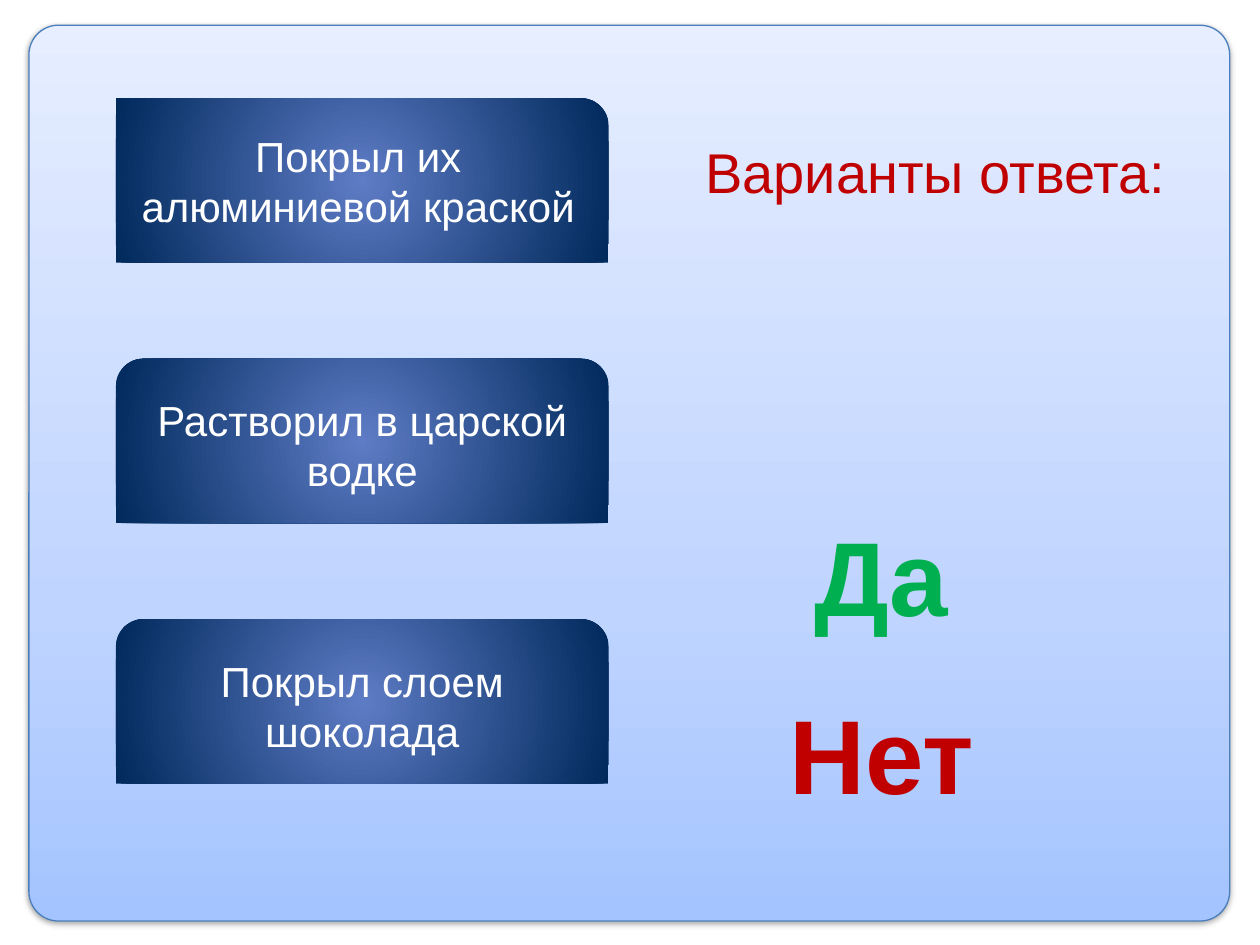
from pptx import Presentation, oxml, util as u
from pptx.dml.color import RGBColor
from pptx.enum import shapes, text
from pptx.oxml import ns

WHITE = RGBColor(0xFF, 0xFF, 0xFF)
RED = RGBColor(0xC0, 0x00, 0x00)
GREEN = RGBColor(0x00, 0xB0, 0x50)
BORDER = RGBColor(0x4B, 0x7E, 0xBC)
PANEL_STOPS = [
    (0, RGBColor(0xA4, 0xC4, 0xFF)),
    (35, RGBColor(0xBF, 0xD4, 0xFF)),
    (100, RGBColor(0xE6, 0xEE, 0xFF)),
]
BUTTON_STOPS = [
    (0, RGBColor(0x5E, 0x7C, 0xC5)),
    (100, RGBColor(0x00, 0x29, 0x5C)),
]
UPWARD = '<a:lin ang="16200000" scaled="0"/>'
RADIAL = '<a:path path="circle"><a:fillToRect l="50000" t="50000" r="50000" b="50000"/></a:path>'
SOFT_SHADOW = (
    f'<a:outerShdw {ns.nsdecls("a")} blurRad="{u.Pt(3.1)}" dist="{u.Pt(1.6)}" dir="5400000" '
    'rotWithShape="0"><a:srgbClr val="000000"><a:alpha val="38000"/></a:srgbClr></a:outerShdw>'
)

COLUMNS, ROWS = 100, 75
WIDTH, HEIGHT = u.Inches(10), u.Inches(7.5)
SHAPE = shapes.MSO_SHAPE


def grid(left, top, width, height):
    col, row = WIDTH / COLUMNS, HEIGHT / ROWS
    return [round(v) for v in (left * col, top * row, width * col, height * row)]


def set_gradient(s, stops, direction):
    s.fill.gradient()
    old = s._element.spPr.find(ns.qn("a:gradFill"))
    marks = "".join(
        f'<a:gs pos="{pos * 1000}"><a:srgbClr val="{color}"/></a:gs>' for pos, color in stops
    )
    new = oxml.parse_xml(
        f'<a:gradFill {ns.nsdecls("a")} rotWithShape="1"><a:gsLst>{marks}</a:gsLst>{direction}</a:gradFill>'
    )
    old.getparent().replace(old, new)


def write(s, words, size=24, color=WHITE, bold=False):
    tf = s.text_frame
    tf.word_wrap = True
    tf.vertical_anchor = text.MSO_ANCHOR.MIDDLE
    p = tf.paragraphs[0]
    p.alignment = text.PP_ALIGN.CENTER
    r = p.add_run()
    r.text = words
    r.font.name = "Arial"
    r.font.size = u.Pt(size)
    r.font.bold = bold
    r.font.color.rgb = color


def add_label(sp, box, words, **style):
    write(sp.add_textbox(*grid(*box)), words, **style)


def add_panel(sp, box):
    s = sp.add_shape(SHAPE.ROUNDED_RECTANGLE, *grid(*box))
    s.adjustments[0] = 0.033
    set_gradient(s, PANEL_STOPS, UPWARD)
    s.line.color.rgb = BORDER
    s.line.width = u.Pt(0.75)
    s.shadow.inherit = False
    s._element.spPr.find(ns.qn("a:effectLst")).append(oxml.parse_xml(SOFT_SHADOW))


def add_answers(sp, box, answers, share=0.24):
    left, top, width, height = box
    button = height * share
    pitch = (height - button) / (len(answers) - 1)
    for i, (kind, words) in enumerate(answers):
        s = sp.add_shape(kind, *grid(left, top + i * pitch, width, button))
        set_gradient(s, BUTTON_STOPS, RADIAL)
        s.line.fill.background()
        s.shadow.inherit = False
        write(s, words)


def add_verdicts(sp, box, verdicts, row=10):
    left, top, width, height = box
    pitch = (height - row) / (len(verdicts) - 1)
    for i, (words, color) in enumerate(verdicts):
        add_label(sp, (left, top + i * pitch, width, row), words, size=60, color=color, bold=True)


def main():
    prs = Presentation()
    prs.slide_width, prs.slide_height = WIDTH, HEIGHT
    sp = prs.slides.add_slide(prs.slide_layouts[6]).shapes
    add_panel(sp, (2.3, 2, 95.3, 71.1))
    add_answers(sp, (9.2, 7.8, 39.1, 54.4), [
        (SHAPE.ROUND_1_RECTANGLE, "Покрыл их алюминиевой краской"),
        (SHAPE.ROUND_2_SAME_RECTANGLE, "Растворил в царской водке"),
        (SHAPE.ROUND_2_SAME_RECTANGLE, "Покрыл слоем шоколада"),
    ])
    add_label(sp, (50.8, 8.6, 46.9, 10), "Варианты ответа:", size=32, color=RED)
    add_verdicts(sp, (58.6, 40.6, 22.7, 24.1), [("Да", GREEN), ("Нет", RED)])
    prs.save("out.pptx")


if __name__ == "__main__":
    main()
